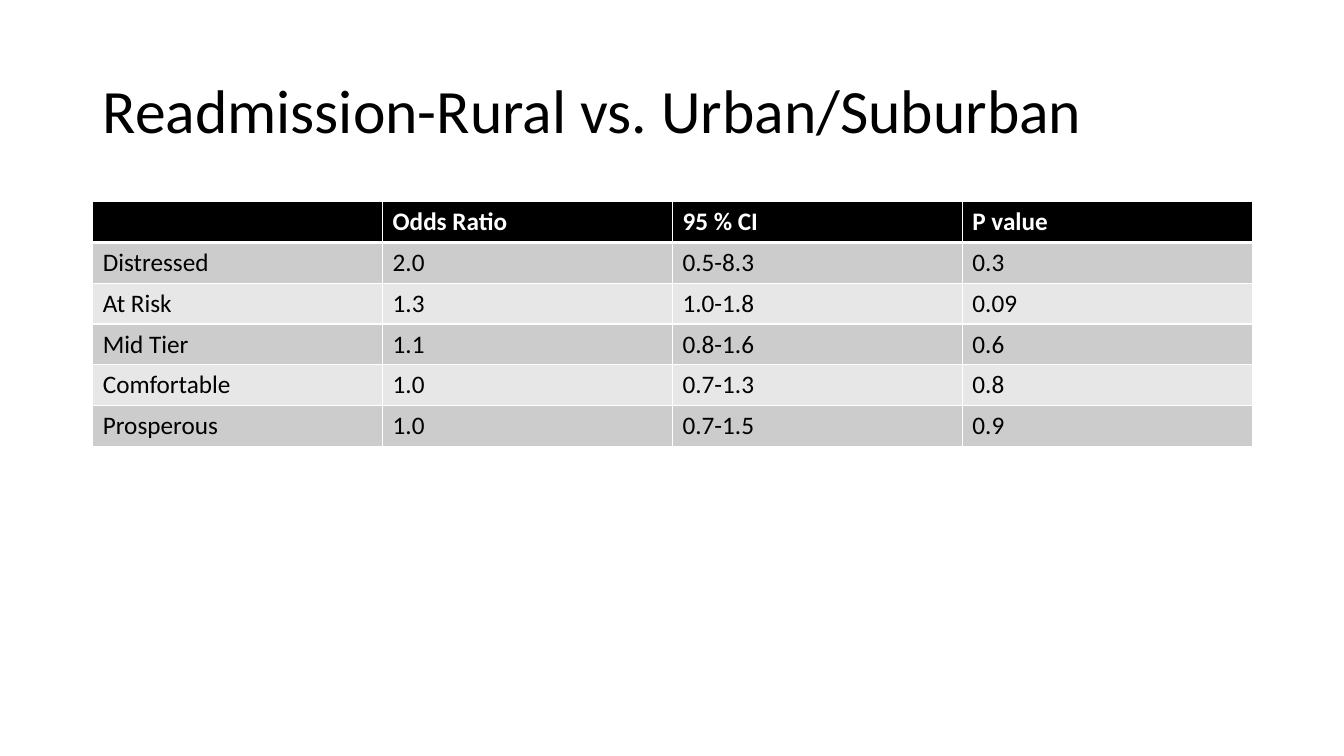
from dataclasses import dataclass

from lxml import etree
from pptx import Presentation
from pptx.dml.color import RGBColor
from pptx.enum.text import MSO_ANCHOR
from pptx.oxml.ns import qn
from pptx.slide import Slide
from pptx.table import _Cell
from pptx.text.text import _Paragraph
from pptx.util import Inches, Pt

MIDDLE = MSO_ANCHOR.MIDDLE
BLACK = RGBColor(0x00, 0x00, 0x00)
WHITE = RGBColor(0xFF, 0xFF, 0xFF)
DARK_BAND = RGBColor(0xCC, 0xCC, 0xCC)
LIGHT_BAND = RGBColor(0xE7, 0xE7, 0xE7)
FONT_NAME = "Calibri"

SLIDE_WIDTH, SLIDE_HEIGHT = Inches(13.33), Inches(7.5)
MARGIN = Inches(0.92)
CONTENT_WIDTH = Inches(11.5)
TITLE_TOP, TITLE_HEIGHT = Inches(0.4), Inches(1.45)
TABLE_TOP, TABLE_HEIGHT = Inches(2), Inches(2.43)
THIN, THICK = Pt(1), Pt(3)

TITLE = "Readmission-Rural vs. Urban/Suburban"
HEADINGS = ("", "Odds Ratio", "95 % CI", "P value")


@dataclass(frozen=True)
class TierResult:
    tier: str
    odds_ratio: str
    confidence_interval: str
    p_value: str

    def texts(self) -> tuple[str, ...]:
        return self.tier, self.odds_ratio, self.confidence_interval, self.p_value


RESULTS = (
    TierResult("Distressed", "2.0", "0.5-8.3", "0.3"),
    TierResult("At Risk", "1.3", "1.0-1.8", "0.09"),
    TierResult("Mid Tier", "1.1", "0.8-1.6", "0.6"),
    TierResult("Comfortable", "1.0", "0.7-1.3", "0.8"),
    TierResult("Prosperous", "1.0", "0.7-1.5", "0.9"),
)


def set_font(paragraph: _Paragraph, size: int, color: RGBColor, bold: bool = False) -> None:
    font = paragraph.font
    font.name = FONT_NAME
    font.size = Pt(size)
    font.bold = bold
    font.color.rgb = color


def set_borders(cell: _Cell, top: int, bottom: int) -> None:
    """Draw white borders; the schema wants them ahead of the cell's fill."""
    properties = cell._tc.get_or_add_tcPr()
    widths = {"a:lnL": THIN, "a:lnR": THIN, "a:lnT": top, "a:lnB": bottom}
    for position, (tag, width) in enumerate(widths.items()):
        line = etree.Element(qn(tag), w=str(width))
        fill = etree.SubElement(line, qn("a:solidFill"))
        etree.SubElement(fill, qn("a:srgbClr"), val=str(WHITE))
        properties.insert(position, line)


def add_title(slide: Slide) -> None:
    shape = slide.shapes.add_textbox(MARGIN, TITLE_TOP, CONTENT_WIDTH, TITLE_HEIGHT)
    frame = shape.text_frame
    frame.word_wrap = True
    frame.vertical_anchor = MIDDLE
    paragraph = frame.paragraphs[0]
    paragraph.text = TITLE
    paragraph.line_spacing = 0.9
    set_font(paragraph, 44, BLACK)


def add_results_table(slide: Slide) -> None:
    rows = [HEADINGS, *(result.texts() for result in RESULTS)]
    table = slide.shapes.add_table(
        len(rows), len(HEADINGS), MARGIN, TABLE_TOP, CONTENT_WIDTH, TABLE_HEIGHT
    ).table
    for row_index, texts in enumerate(rows):
        is_header = row_index == 0
        band = DARK_BAND if row_index % 2 else LIGHT_BAND
        for column_index, text in enumerate(texts):
            cell = table.cell(row_index, column_index)
            cell.text = text
            cell.fill.solid()
            cell.fill.fore_color.rgb = BLACK if is_header else band
            set_borders(
                cell,
                top=THICK if row_index == 1 else THIN,
                bottom=THICK if is_header else THIN,
            )
            set_font(
                cell.text_frame.paragraphs[0], 18, WHITE if is_header else BLACK, is_header
            )


def main() -> None:
    presentation = Presentation()
    presentation.slide_width = SLIDE_WIDTH
    presentation.slide_height = SLIDE_HEIGHT
    slide = presentation.slides.add_slide(presentation.slide_layouts[6])
    add_title(slide)
    add_results_table(slide)
    presentation.save("out.pptx")


if __name__ == "__main__":
    main()
